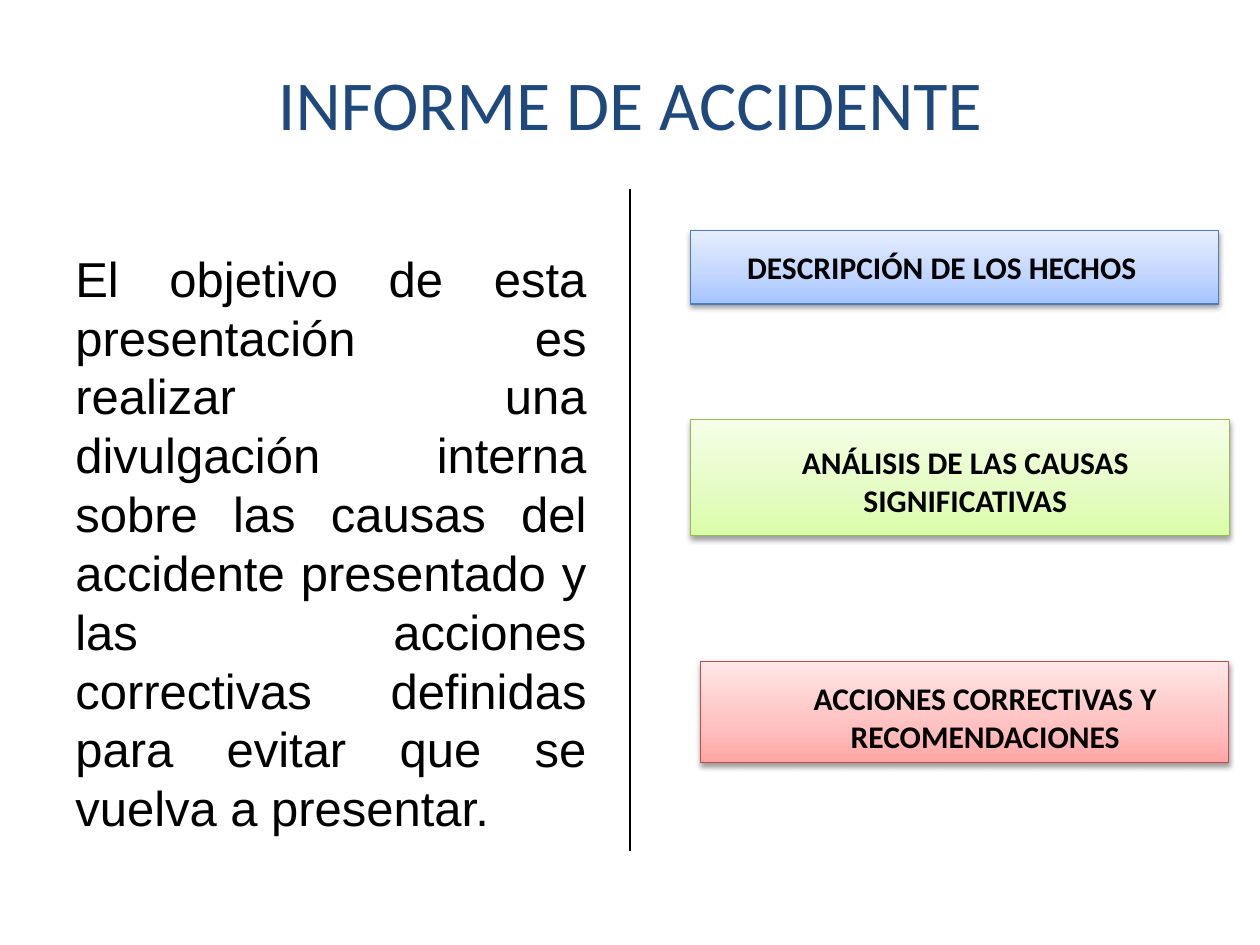
from lxml import etree
from pptx import Presentation
from pptx.dml.color import RGBColor
from pptx.enum import shapes, text
from pptx.oxml import parse_xml
from pptx.oxml.ns import nsdecls, qn
from pptx.util import Cm, Pt

COLORS = {"title": "1F497D", "text": "000000", "divider": "000000", "shadow": "000000",
          "blue": "4B7EBC", "green": "98B955", "red": "BF4C48"}
GRADIENTS = {"blue": ("A4C4FF", "BFD4FF", "E6EEFF"),
             "green": ("DAFDA7", "E4FCC2", "F5FFE7"),
             "red": ("FFA6A5", "FFC0BF", "FFE7E7")}
STOPS = (0, 35, 100)

TITLE = "INFORME DE ACCIDENTE"
OBJECTIVE = ("El objetivo de esta presentación es realizar una divulgación interna "
             "sobre las causas del accidente presentado y las acciones correctivas "
             "definidas para evitar que se vuelva a presentar.")
LEFT, CENTER, JUSTIFY = text.PP_ALIGN.LEFT, text.PP_ALIGN.CENTER, text.PP_ALIGN.JUSTIFY
# label, colour, box (left, top, width, height) and label place, all in cm, alignment
SECTIONS = [
    ("DESCRIPCIÓN DE LOS HECHOS", "blue",
     (13.92, 4.65, 10.64, 1.48), (14.81, 4.88, 9.96, 1.02), LEFT),
    ("ANÁLISIS DE LAS CAUSAS SIGNIFICATIVAS", "green",
     (13.92, 8.46, 10.87, 2.34), (14.48, 8.81, 9.96, 1.8), CENTER),
    ("ACCIONES CORRECTIVAS Y RECOMENDACIONES", "red",
     (14.12, 13.34, 10.64, 2.03), (14.88, 13.56, 9.96, 1.8), CENTER),
]


def rgb(name):
    return RGBColor.from_string(COLORS[name])


def add_text(s, content, place, size, font, color="text", align=LEFT, bold=False,
             anchor=text.MSO_ANCHOR.TOP):
    tf = s.shapes.add_textbox(*map(Cm, place)).text_frame
    tf.word_wrap = True
    tf.vertical_anchor = anchor
    p = tf.paragraphs[0]
    p.text = content
    p.alignment = align
    p.font.size, p.font.name, p.font.bold = Pt(size), font, bold
    p.font.color.rgb = rgb(color)


def add_box(s, color, place):
    """Rectangle with a three-stop vertical gradient and a soft shadow below."""
    sp = s.shapes.add_shape(shapes.MSO_SHAPE.RECTANGLE, *map(Cm, place))
    sp.line.color.rgb = rgb(color)
    sp.line.width = Pt(0.75)
    stops = "".join(f'<a:gs pos="{pos * 1000}"><a:srgbClr val="{c}"/></a:gs>'
                    for pos, c in zip(STOPS, GRADIENTS[color]))
    ln = sp.line._get_or_add_ln()
    ln.addprevious(parse_xml(
        f'<a:gradFill {nsdecls("a")} rotWithShape="1"><a:gsLst>{stops}</a:gsLst>'
        '<a:lin ang="16200000" scaled="0"/></a:gradFill>'))
    ln.addnext(parse_xml(
        f'<a:effectLst {nsdecls("a")}><a:outerShdw blurRad="{Pt(3.1)}" dist="{Pt(1.6)}" '
        f'dir="5400000" rotWithShape="0"><a:srgbClr val="{COLORS["shadow"]}">'
        '<a:alpha val="38000"/></a:srgbClr></a:outerShdw></a:effectLst>'))


def add_divider(s, x, top, bottom):
    line = s.shapes.add_connector(shapes.MSO_CONNECTOR.STRAIGHT,
                                  Cm(x), Cm(top), Cm(x), Cm(bottom))
    line.line.color.rgb = rgb("divider")
    line.line.width = Pt(0.75)
    etree.SubElement(line._element.spPr, qn("a:effectLst"))


def main():
    prs = Presentation()
    prs.slide_width, prs.slide_height = Cm(25.4), Cm(19.05)
    s = prs.slides.add_slide(prs.slide_layouts[6])
    add_text(s, TITLE, (1.27, 1.09, 22.86, 1.96), 40, "Calibri", "title", CENTER,
             anchor=text.MSO_ANCHOR.MIDDLE)
    add_text(s, OBJECTIVE, (1.27, 4.88, 10.8, 12.24), 28, "Arial", align=JUSTIFY)
    for label, color, box, place, align in SECTIONS:
        add_box(s, color, box)
        add_text(s, label, place, 18, "Calibri", align=align, bold=True)
    add_divider(s, 12.7, 3.81, 17.15)
    prs.save("out.pptx")


if __name__ == "__main__":
    main()
